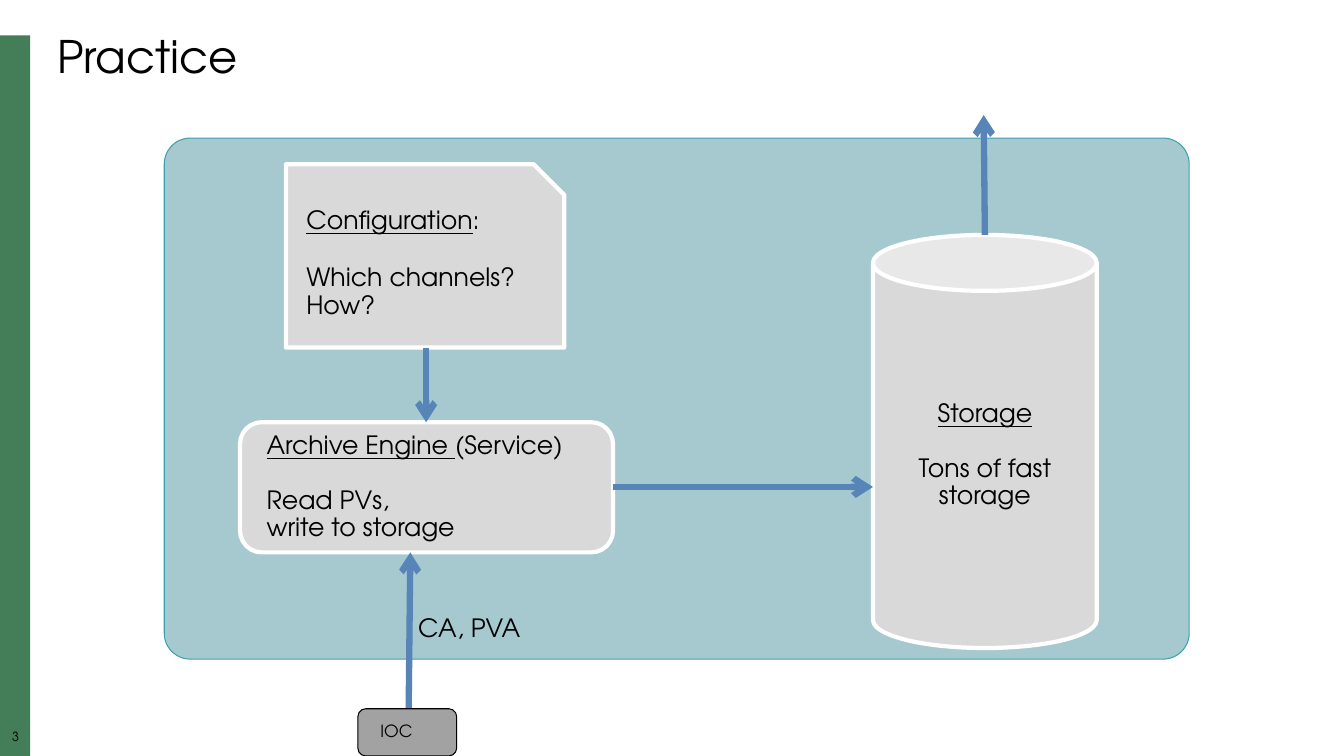
from dataclasses import dataclass

from lxml import etree
from pptx import Presentation
from pptx.dml.color import RGBColor
from pptx.enum.shapes import MSO_CONNECTOR, MSO_SHAPE
from pptx.enum.text import MSO_ANCHOR, PP_ALIGN
from pptx.oxml.ns import qn
from pptx.slide import Slide
from pptx.text.text import TextFrame
from pptx.util import Cm, Pt

FONT = "TeX Gyre Adventor"
COLORS = {
    "bar": "447E59",
    "panel": "A6C9CF",
    "panel_line": "3BA2AD",
    "block": "D9D9D9",
    "white": "FFFFFF",
    "arrow": "5785B7",
    "device": "A2A2A2",
    "black": "000000",
}


@dataclass(frozen=True)
class Run:
    text: str
    underline: bool = False


@dataclass(frozen=True)
class Line:
    runs: tuple[Run, ...]
    space_before: float = 0


@dataclass(frozen=True)
class Block:
    kind: MSO_SHAPE
    box: tuple[float, float, float, float]
    fill: str
    outline: str | None = None
    outline_width: float = 0.75
    lines: tuple[Line, ...] = ()
    size: float = 18
    align: PP_ALIGN = PP_ALIGN.LEFT
    corner: float | None = None


@dataclass(frozen=True)
class Label:
    text: str
    box: tuple[float, float, float, float]
    size: float
    align: PP_ALIGN = PP_ALIGN.LEFT
    wrap: bool = True
    padded: bool = True


@dataclass(frozen=True)
class Arrow:
    start: tuple[float, float]
    end: tuple[float, float]


def color(name: str) -> RGBColor:
    return RGBColor.from_string(COLORS[name])


def set_margins(frame: TextFrame, margin: float) -> None:
    frame.margin_left = frame.margin_right = Cm(margin)
    frame.margin_top = frame.margin_bottom = Cm(margin)


def write_lines(frame: TextFrame, lines: tuple[Line, ...], size: float, align: PP_ALIGN) -> None:
    for index, line in enumerate(lines):
        paragraph = frame.paragraphs[0] if index == 0 else frame.add_paragraph()
        paragraph.alignment = align
        paragraph.line_spacing = 0.9
        if line.space_before:
            paragraph.space_before = Pt(line.space_before)
        for part in line.runs:
            run = paragraph.add_run()
            run.text = part.text
            run.font.name = FONT
            run.font.size = Pt(size)
            run.font.underline = part.underline
            run.font.color.rgb = color("black")


def draw_block(slide: Slide, block: Block) -> None:
    shape = slide.shapes.add_shape(block.kind, *map(Cm, block.box))
    shape.shadow.inherit = False
    shape.fill.solid()
    shape.fill.fore_color.rgb = color(block.fill)
    if block.outline:
        shape.line.color.rgb = color(block.outline)
        shape.line.width = Pt(block.outline_width)
    else:
        shape.line.fill.background()
    if block.corner is not None:
        shape.adjustments[0] = block.corner
    if block.lines:
        frame = shape.text_frame
        frame.word_wrap = True
        frame.vertical_anchor = MSO_ANCHOR.MIDDLE
        set_margins(frame, 0.51)
        write_lines(frame, block.lines, block.size, block.align)


def draw_label(slide: Slide, label: Label) -> None:
    frame = slide.shapes.add_textbox(*map(Cm, label.box)).text_frame
    frame.word_wrap = label.wrap
    if not label.padded:
        set_margins(frame, 0)
    write_lines(frame, (Line((Run(label.text),)),), label.size, label.align)


def draw_arrow(slide: Slide, arrow: Arrow) -> None:
    connector = slide.shapes.add_connector(
        MSO_CONNECTOR.STRAIGHT, *map(Cm, arrow.start + arrow.end)
    )
    connector.line.color.rgb = color("arrow")
    connector.line.width = Pt(4.5)
    properties = connector._element.spPr
    etree.SubElement(properties.find(qn("a:ln")), qn("a:tailEnd"), type="arrow")
    etree.SubElement(properties, qn("a:effectLst"))


BLOCKS = (
    Block(MSO_SHAPE.RECTANGLE, (0, 0.89, 0.76, 18.16), "bar"),
    Block(MSO_SHAPE.ROUNDED_RECTANGLE, (4.14, 3.48, 25.83, 13.13), "panel", "panel_line", corner=0.05),
    Block(
        MSO_SHAPE.CAN, (22, 5.92, 5.64, 10.41), "block", "white", 3,
        (Line((Run("Storage", True),)), Line((Run("Tons of fast storage"),), 20)),
        align=PP_ALIGN.CENTER,
    ),
    Block(
        MSO_SHAPE.ROUNDED_RECTANGLE, (6.05, 10.64, 9.4, 3.28), "block", "white", 3,
        (
            Line((Run("Archive Engine ", True), Run("(Service)"))),
            Line((Run("Read PVs,"),), 20),
            Line((Run("write to storage"),)),
        ),
    ),
    Block(
        MSO_SHAPE.SNIP_1_RECTANGLE, (7.21, 4.14, 7.01, 4.62), "block", "white", 3,
        (
            Line((Run("Configuration", True), Run(":"))),
            Line((Run("Which channels?"),), 21.5),
            Line((Run("How?"),)),
        ),
    ),
)
ARROWS = (
    Arrow((10.29, 18.77), (10.34, 13.92)),
    Arrow((15.44, 12.27), (22, 12.27)),
    Arrow((10.74, 8.76), (10.74, 10.64)),
    Arrow((24.82, 5.92), (24.79, 2.9)),
)
LABELS = (
    Label("3", (0, 18.42, 0.79, 0.43), 9, PP_ALIGN.CENTER, padded=False),
    Label("Practice", (1.19, 0.76, 31.75, 1.5), 32),
    Label("CA, PVA", (10.29, 15.39, 3.18, 0.94), 18, wrap=False),
)
DEVICE = Block(
    MSO_SHAPE.ROUNDED_RECTANGLE, (9.02, 17.86, 2.49, 1.19), "device", "black",
    lines=(Line((Run("IOC"),)),), size=12,
)


def main() -> None:
    presentation = Presentation()
    presentation.slide_width = Cm(33.87)
    presentation.slide_height = Cm(19.05)
    slide = presentation.slides.add_slide(presentation.slide_layouts[6])
    for block in BLOCKS:
        draw_block(slide, block)
    for arrow in ARROWS:
        draw_arrow(slide, arrow)
    for label in LABELS:
        draw_label(slide, label)
    draw_block(slide, DEVICE)
    presentation.save("out.pptx")


if __name__ == "__main__":
    main()
